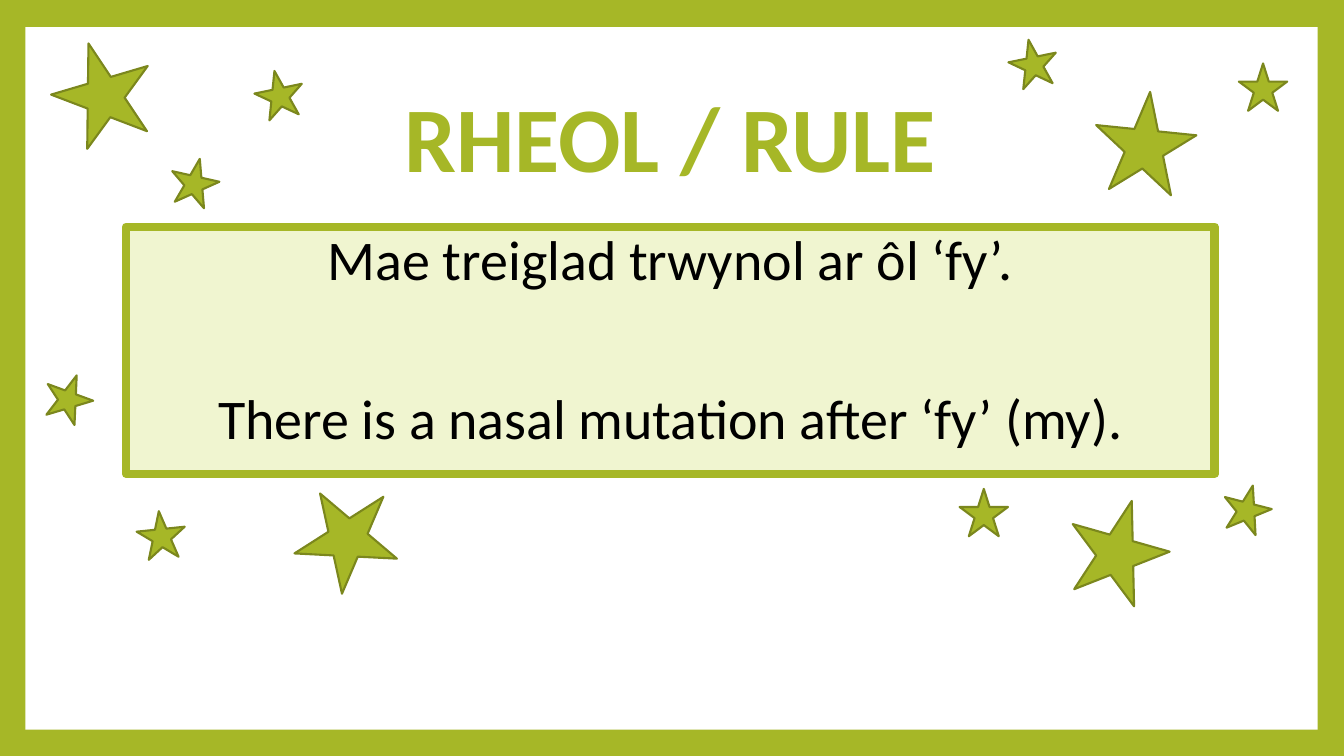
from pptx import Presentation
from pptx.dml.color import RGBColor
from pptx.enum.shapes import MSO_SHAPE
from pptx.enum.text import MSO_ANCHOR, PP_ALIGN
from pptx.util import Inches, Pt

WIDTH, HEIGHT = Inches(13.33), Inches(7.5)
LIME = RGBColor(0xA6, 0xB7, 0x27)
OLIVE = RGBColor(0x7B, 0x87, 0x1D)
PALE = RGBColor(0xF0, 0xF5, 0xD0)
WHITE = RGBColor(0xFF, 0xFF, 0xFF)
BLACK = RGBColor(0, 0, 0)

SLIDE = (0, 0, 100, 100)
PANEL = (1.88, 3.6, 96.15, 92.93)
TITLE = (9.38, 8.93, 81, 19.73)
RULE = (9.38, 30, 81, 32.67)
LARGE, SMALL = (7.5, 13.33), (3.6, 6.27)
STARS = (
    (LARGE, ((3.9, 5.47, 343.5), (79.43, 66, 15.9),
             (81.45, 12.13, 5.8), (22.35, 64.13, 40.3))),
    (SMALL, ((12.68, 20.93, 12.7), (18.98, 9.33, 348.3),
             (3.3, 49.47, 20.1), (10.2, 67.6, 354.1),
             (92.18, 8.4, 0), (90.98, 64.13, 14.4),
             (71.4, 64.67, 0), (75.08, 5.2, 348.5))),
)


def scale(box):
    """Turn a box in percent of the slide into lengths."""
    return [int(part * side / 100)
            for part, side in zip(box, (WIDTH, HEIGHT) * 2)]


def add_form(slide, kind, box, fill, line=None, weight=0, turn=0):
    """Draw a flat preset shape in the box."""
    form = slide.shapes.add_shape(kind, *scale(box))
    form.shadow.inherit = False
    form.fill.solid()
    form.fill.fore_color.rgb = fill
    if line is None:
        form.line.fill.background()
    else:
        form.line.color.rgb = line
        form.line.width = Pt(weight)
    form.rotation = turn
    return form


def write(frame, lines, size, color, bold=False, anchor=MSO_ANCHOR.TOP, gaps=(0,)):
    """Fill a frame with centred lines, each after its gap."""
    frame.word_wrap = True
    frame.vertical_anchor = anchor
    for row, (text, gap) in enumerate(zip(lines, gaps)):
        para = frame.add_paragraph() if row else frame.paragraphs[0]
        para.alignment = PP_ALIGN.CENTER
        para.line_spacing = 0.9
        para.space_before = Pt(gap)
        run = para.add_run()
        run.text = text
        font = run.font
        font.name, font.size, font.bold = "Calibri", Pt(size), bold
        font.color.rgb = color


def add_title(slide, box):
    """Place the heading in the box."""
    frame = slide.shapes.add_textbox(*scale(box)).text_frame
    write(frame, ["RHEOL / RULE"], 66, LIME, bold=True, anchor=MSO_ANCHOR.MIDDLE)


def add_rule(slide, box):
    """Place the framed rule in both languages."""
    form = add_form(slide, MSO_SHAPE.RECTANGLE, box, PALE, LIME, 6)
    lines = ["Mae treiglad trwynol ar ôl ‘fy’.",
             "There is a nasal mutation after ‘fy’ (my)."]
    write(form.text_frame, lines, 40, BLACK, gaps=(14, 71))


def add_stars(slide, box):
    """Scatter large and small stars over the box."""
    left, top, width, height = box
    for (wide, high), spots in STARS:
        for col, row, turn in spots:
            spot = (left + col * width / 100, top + row * height / 100,
                    wide * width / 100, high * height / 100)
            add_form(slide, MSO_SHAPE.STAR_5_POINT, spot, LIME, OLIVE, 1.5, turn)


def main():
    """Build and save the slide."""
    deck = Presentation()
    deck.slide_width, deck.slide_height = WIDTH, HEIGHT
    slide = deck.slides.add_slide(deck.slide_layouts[6])
    slide.background.fill.solid()
    slide.background.fill.fore_color.rgb = LIME
    add_form(slide, MSO_SHAPE.RECTANGLE, PANEL, WHITE)
    add_title(slide, TITLE)
    add_rule(slide, RULE)
    add_stars(slide, SLIDE)
    deck.save("out.pptx")


if __name__ == "__main__":
    main()
